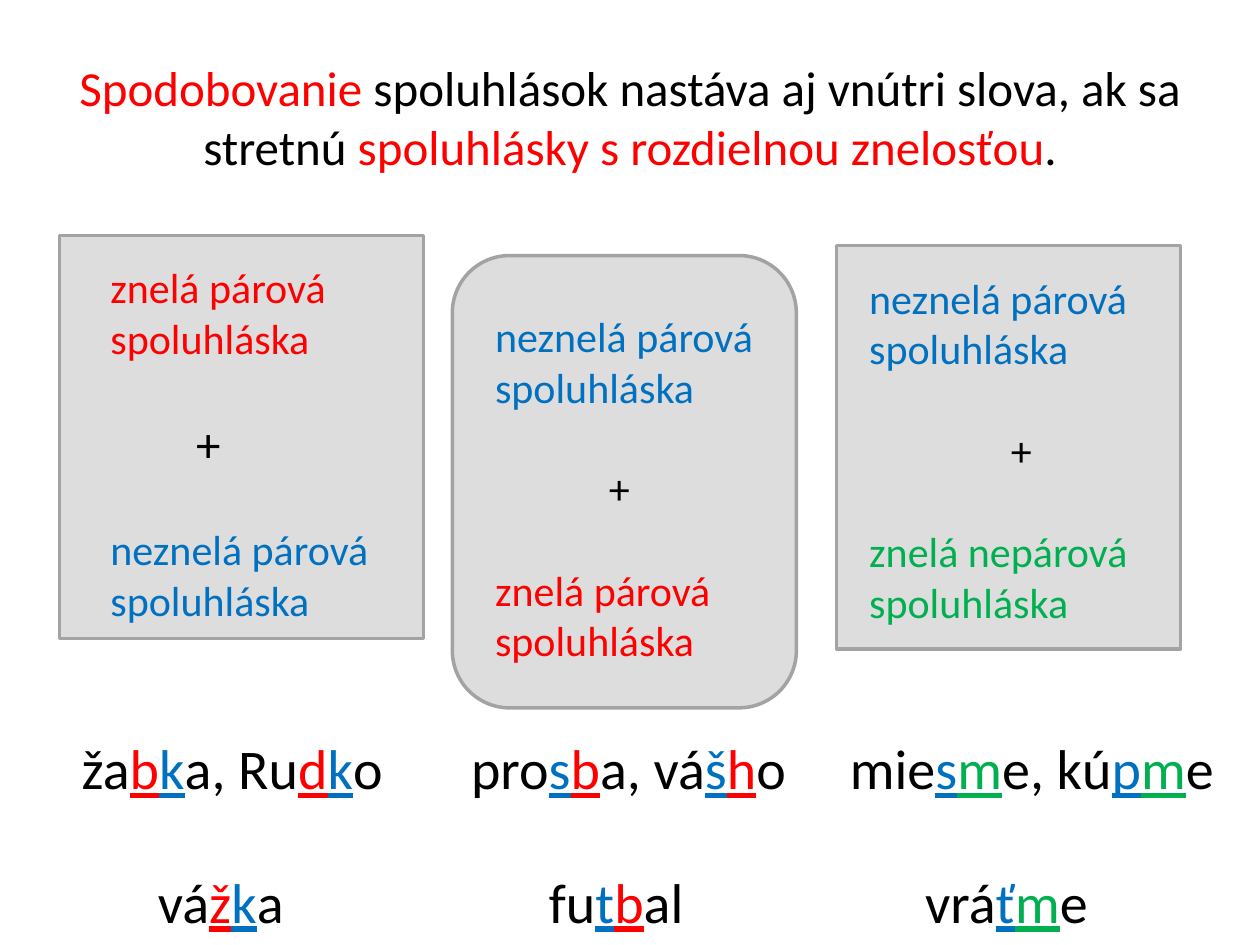
from dataclasses import dataclass
from typing import NamedTuple

from lxml import etree
from pptx import Presentation
from pptx.dml.color import RGBColor
from pptx.enum.shapes import MSO_SHAPE
from pptx.enum.text import MSO_ANCHOR, PP_ALIGN
from pptx.oxml.ns import qn
from pptx.util import Pt

RECT, ROUNDED = MSO_SHAPE.RECTANGLE, MSO_SHAPE.ROUNDED_RECTANGLE
MIDDLE, CENTER = MSO_ANCHOR.MIDDLE, PP_ALIGN.CENTER


@dataclass(frozen=True)
class Theme:
    font: str = "Calibri"
    ink: RGBColor = RGBColor(0, 0, 0)
    voiced: RGBColor = RGBColor(0xFF, 0, 0)
    voiceless: RGBColor = RGBColor(0, 0x70, 0xC0)
    sonorant: RGBColor = RGBColor(0, 0xB0, 0x50)
    card: RGBColor = RGBColor(0xDD, 0xDD, 0xDD)
    border: RGBColor = RGBColor(0xA3, 0xA3, 0xA3)
    title_size: float = 28
    rule_size: float = 24
    example_size: float = 32


THEME = Theme()


class Box(NamedTuple):
    left: float
    top: float
    width: float
    height: float


class Piece(NamedTuple):
    text: str
    color: RGBColor = THEME.ink


@dataclass(frozen=True)
class RuleCard:
    outline: int
    frame: Box
    text_area: Box
    first: Piece
    second: Piece
    plus_indent: float
    plus_size: float = THEME.rule_size


@dataclass(frozen=True)
class ExampleLine:
    tab_stops: tuple[float, ...]
    pieces: tuple[Piece, ...]
    space_before: float = 0


def red(text: str) -> Piece:
    return Piece(text, THEME.voiced)


def blue(text: str) -> Piece:
    return Piece(text, THEME.voiceless)


def green(text: str) -> Piece:
    return Piece(text, THEME.sonorant)


TITLE = (red("Spodobovanie "),
         Piece("spoluhlások nastáva aj vnútri slova, ak sa stretnú "),
         red("spoluhlásky s rozdielnou znelosťou"), Piece("."))

VOICED_PAIR = red("znelá párová spoluhláska")
VOICELESS_PAIR = blue("neznelá párová spoluhláska")
UNPAIRED = green("znelá nepárová spoluhláska")

CARDS = (
    RuleCard(RECT, Box(34, 134.6, 208, 230.4), Box(56, 146, 180, 216),
             VOICED_PAIR, VOICELESS_PAIR, 49, THEME.title_size),
    RuleCard(ROUNDED, Box(258.5, 146, 196.6, 258.5), Box(275.8, 174, 202, 211),
             VOICELESS_PAIR, VOICED_PAIR, 65),
    RuleCard(RECT, Box(478, 140.4, 196.6, 230.4), Box(489.6, 152, 180, 211),
             VOICELESS_PAIR, UNPAIRED, 81),
)

EXAMPLES = (
    ExampleLine((222.5, 439), (
        Piece("ža"), red("b"), blue("k"), Piece("a, Ru"), red("d"), blue("k"),
        Piece("o\tpro"), blue("s"), red("b"), Piece("a, vá"), blue("š"),
        red("h"), Piece("o\tmie"), blue("s"), green("m"), Piece("e, kú"),
        blue("p"), green("m"), Piece("e"))),
    ExampleLine((43.5, 267, 482), (
        Piece("\tvá"), red("ž"), blue("k"), Piece("a\tfu"), blue("t"), red("b"),
        Piece("al\tvrá"), blue("ť"), green("m"), Piece("e")), 38),
)


def add_text_box(slide, box: Box):
    frame = slide.shapes.add_textbox(*map(Pt, box)).text_frame
    frame.word_wrap = True
    return frame


def style(paragraph, size: float) -> None:
    paragraph.font.name = THEME.font
    paragraph.font.size = Pt(size)


def add_pieces(paragraph, pieces: tuple[Piece, ...], underline: bool = False) -> None:
    """Add coloured runs, optionally underlining those that are not plain ink."""
    for piece in pieces:
        run = paragraph.add_run()
        run.text = piece.text
        run.font.color.rgb = piece.color
        if underline and piece.color != THEME.ink:
            run.font.underline = True


def add_title(slide) -> None:
    frame = add_text_box(slide, Box(36, 21.6, 648, 90))
    frame.vertical_anchor = MIDDLE
    heading = frame.paragraphs[0]
    heading.alignment = CENTER
    style(heading, THEME.title_size)
    add_pieces(heading, TITLE)


def add_card_outline(slide, card: RuleCard) -> None:
    outline = slide.shapes.add_shape(card.outline, *map(Pt, card.frame))
    outline.shadow.inherit = False
    outline.fill.solid()
    outline.fill.fore_color.rgb = THEME.card
    outline.line.color.rgb = THEME.border
    outline.line.width = Pt(2)


def add_card_text(slide, card: RuleCard) -> None:
    frame = add_text_box(slide, card.text_area)
    first, plus, second = (frame.paragraphs[0], frame.add_paragraph(),
                           frame.add_paragraph())
    lines = ((first, card.first, THEME.rule_size),
             (plus, Piece("+"), card.plus_size),
             (second, card.second, THEME.rule_size))
    for paragraph, piece, size in lines:
        style(paragraph, size)
        add_pieces(paragraph, (piece,))
    plus.space_before = plus.space_after = Pt(29.3)
    plus._p.get_or_add_pPr().set("marL", str(Pt(card.plus_indent)))


def set_tab_stops(paragraph, stops: tuple[float, ...]) -> None:
    """Add left tab stops; call before the paragraph font is set."""
    tabs = etree.SubElement(paragraph._p.get_or_add_pPr(), qn("a:tabLst"))
    for stop in stops:
        etree.SubElement(tabs, qn("a:tab"), pos=str(Pt(stop)), algn="l")


def add_examples(slide) -> None:
    frame = add_text_box(slide, Box(39.6, 415.8, 669.6, 122))
    paragraphs = (frame.paragraphs[0], frame.add_paragraph())
    for paragraph, line in zip(paragraphs, EXAMPLES):
        set_tab_stops(paragraph, line.tab_stops)
        paragraph.space_before = Pt(line.space_before)
        style(paragraph, THEME.example_size)
        add_pieces(paragraph, line.pieces, underline=True)


def main() -> None:
    deck = Presentation()
    deck.slide_width, deck.slide_height = Pt(720), Pt(540)
    slide = deck.slides.add_slide(deck.slide_layouts[6])
    add_title(slide)
    for card in CARDS:
        add_card_outline(slide, card)
    for card in CARDS:
        add_card_text(slide, card)
    add_examples(slide)
    deck.save("out.pptx")


if __name__ == "__main__":
    main()
